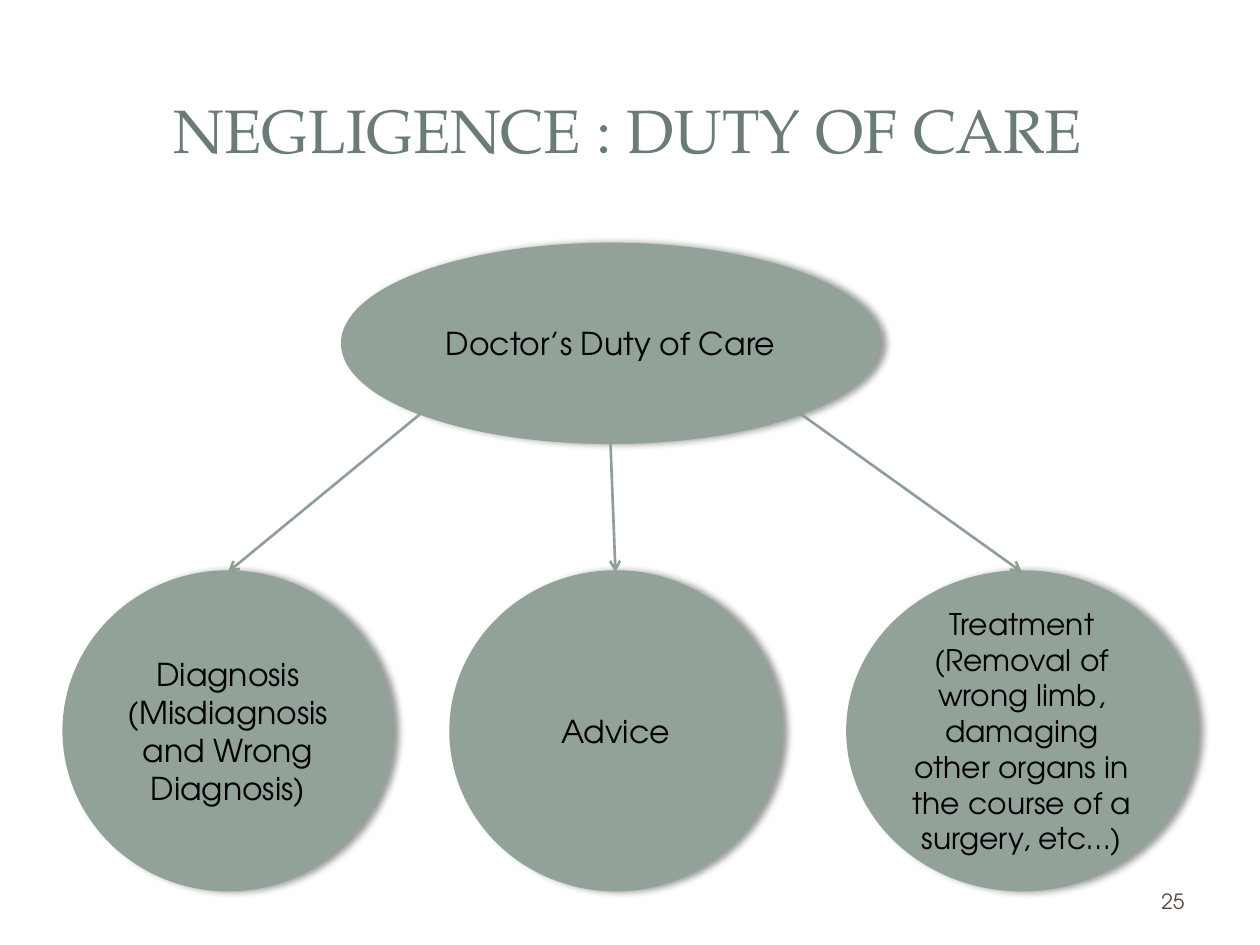
from math import sqrt

from lxml import etree
from pptx import Presentation
from pptx.dml.color import RGBColor
from pptx.enum.shapes import MSO_CONNECTOR, MSO_SHAPE
from pptx.enum.text import MSO_ANCHOR, MSO_AUTO_SIZE, PP_ALIGN
from pptx.oxml.ns import qn
from pptx.util import Inches, Pt

SAGE = RGBColor(0x93, 0xA2, 0x99)
ARROW_SAGE = RGBColor(0x8F, 0x9F, 0x96)
TITLE_GREEN = RGBColor(0x6B, 0x7D, 0x72)
BROWN = RGBColor(0x56, 0x4B, 0x3C)
BLACK = RGBColor(0, 0, 0)

TITLE_FONT = "TeX Gyre Pagella"
BODY_FONT = "TeX Gyre Adventor"

OVAL = MSO_SHAPE.OVAL
STRAIGHT = MSO_CONNECTOR.STRAIGHT
MIDDLE = MSO_ANCHOR.MIDDLE
NO_AUTOFIT = MSO_AUTO_SIZE.NONE
CENTER, RIGHT = PP_ALIGN.CENTER, PP_ALIGN.RIGHT
TOP_SITE = 0

TITLE_ONLY_LAYOUT = 5
DUTY_BOX = (2.72, 1.94, 4.25, 1.57)
BRANCH_TOP, BRANCH_HEIGHT = 4.54, 2.52
BRANCHES = [  # left, width, text size, text
    (0.51, 2.6, 18, "Diagnosis\n(Misdiagnosis and Wrong Diagnosis)"),
    (3.58, 2.61, 18, "Advice"),
    (6.73, 2.76, 17, "Treatment (Removal of wrong limb, damaging other organs "
                     "in the course of a surgery, etc…)"),
]


def write_text(shape, text, size, color, font_name=BODY_FONT, alignment=CENTER):
    text_frame = shape.text_frame
    text_frame.word_wrap = True
    text_frame.auto_size = NO_AUTOFIT
    text_frame.vertical_anchor = MIDDLE
    text_frame.text = text
    for paragraph in text_frame.paragraphs:
        paragraph.alignment = alignment
        for run in paragraph.runs:
            run.font.size = Pt(size)
            run.font.name = font_name
            run.font.color.rgb = color


def add_soft_shadow(shape):
    shape.shadow.inherit = False
    effects = shape._element.spPr.find(qn("a:effectLst"))
    shadow = etree.SubElement(effects, qn("a:outerShdw"), blurRad=str(Pt(4)),
                              dist=str(Pt(3)), dir="0", rotWithShape="0")
    color = etree.SubElement(shadow, qn("a:srgbClr"), val=str(BLACK))
    etree.SubElement(color, qn("a:alpha"), val="40000")


def add_oval(slide, box, text, size):
    oval = slide.shapes.add_shape(OVAL, *map(Inches, box))
    oval.fill.solid()
    oval.fill.fore_color.rgb = SAGE
    oval.line.color.rgb = SAGE
    oval.line.width = Pt(2)
    add_soft_shadow(oval)
    write_text(oval, text, size, BLACK)
    return oval


def add_arrow(slide, start, branch):
    """Draw an arrow from a point to the top of a branch oval."""
    arrow = slide.shapes.add_connector(STRAIGHT, *start, *start)
    arrow.end_connect(branch, TOP_SITE)
    arrow.line.color.rgb = ARROW_SAGE
    arrow.line.width = Pt(1.5)
    etree.SubElement(arrow.line._get_or_add_ln(), qn("a:tailEnd"), type="arrow")
    etree.SubElement(arrow._element.spPr, qn("a:effectLst"))


def lower_rim_points(oval):
    """Return the lower left, bottom and lower right points of an oval."""
    center_x = oval.left + oval.width // 2
    center_y = oval.top + oval.height // 2
    diagonal = sqrt(0.5)
    return [(int(center_x + across * oval.width / 2),
             int(center_y + down * oval.height / 2))
            for across, down in ((-diagonal, diagonal), (0, 1), (diagonal, diagonal))]


def add_title(slide, box):
    title = slide.shapes.title
    title.left, title.top, title.width, title.height = map(Inches, box)
    write_text(title, "NEGLIGENCE : DUTY OF CARE", 35, TITLE_GREEN, TITLE_FONT)


def add_duty_diagram(slide):
    duty = add_oval(slide, DUTY_BOX, "Doctor’s Duty of Care", 18)
    branches = [add_oval(slide, (left, BRANCH_TOP, width, BRANCH_HEIGHT), text, size)
                for left, width, size, text in BRANCHES]
    for start, branch in zip(lower_rim_points(duty), branches):
        add_arrow(slide, start, branch)


def add_page_number(slide, box):
    number = slide.shapes.add_textbox(*map(Inches, box))
    write_text(number, "25", 12, BROWN, alignment=RIGHT)


def main():
    presentation = Presentation()
    presentation.slide_width = Inches(10)
    presentation.slide_height = Inches(7.5)
    slide = presentation.slides.add_slide(presentation.slide_layouts[TITLE_ONLY_LAYOUT])
    add_title(slide, (0.47, 0.45, 9.03, 1.14))
    add_duty_diagram(slide)
    add_page_number(slide, (7.17, 6.95, 2.33, 0.4))
    presentation.save("out.pptx")


if __name__ == "__main__":
    main()
